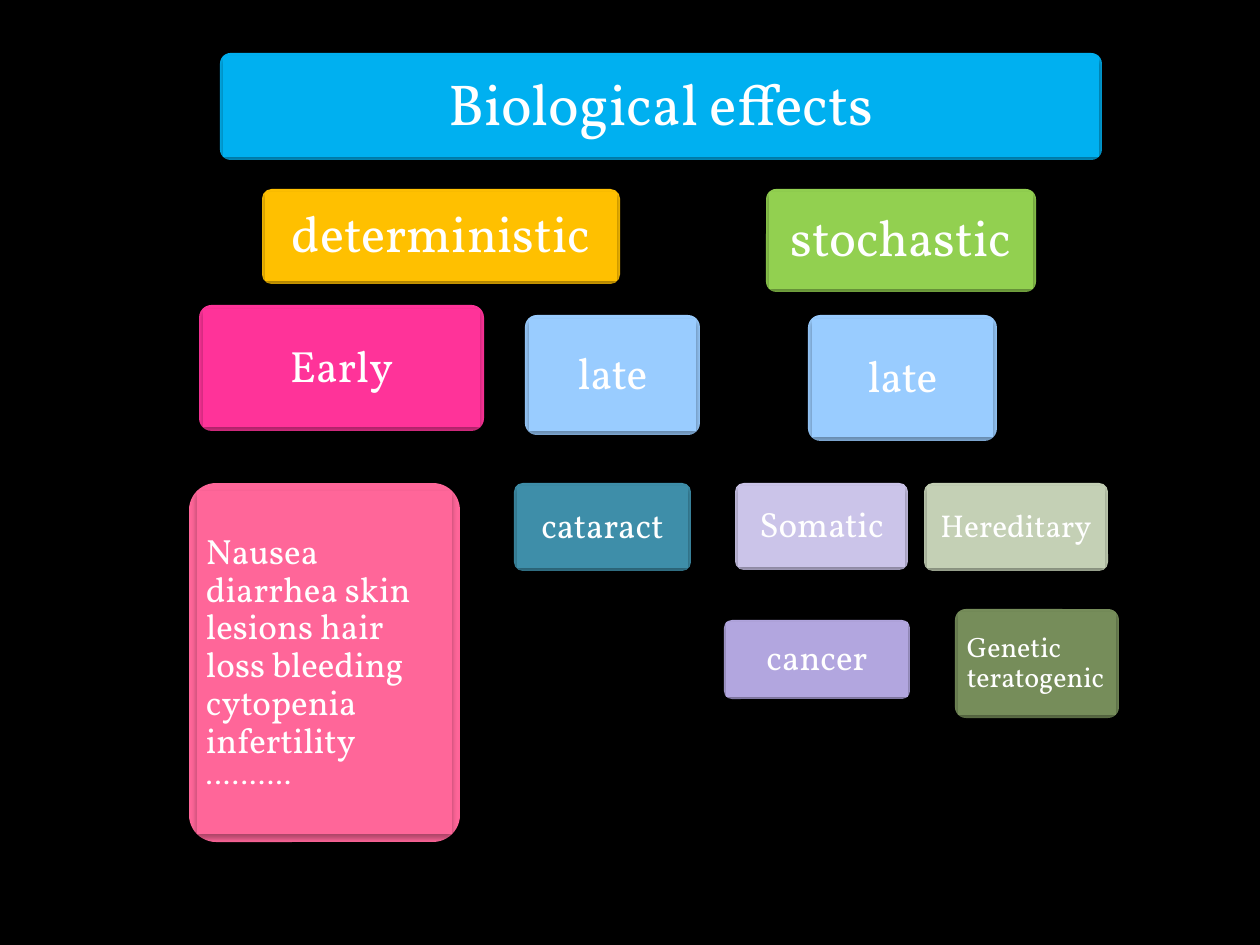
"""Build the slide that charts the biological effects of radiation."""
from lxml.etree import SubElement
from pptx import Presentation
from pptx.dml.color import RGBColor
from pptx.enum.shapes import MSO_SHAPE
from pptx.enum.text import MSO_ANCHOR, PP_ALIGN
from pptx.oxml import parse_xml
from pptx.oxml.ns import nsdecls, qn
from pptx.util import Emu, Pt

EMU_PER_PX = 914400 / 126
SHADOW = (
    f'<a:effectLst {nsdecls("a")}><a:outerShdw blurRad="44450" dist="27940" dir="5400000" '
    'algn="ctr" rotWithShape="0"><a:srgbClr val="000000"><a:alpha val="32000"/></a:srgbClr>'
    '</a:outerShdw></a:effectLst>'
)


def add_panel(group, kind, box, color):
    shape = group.shapes.add_shape(kind, *[Emu(round(length * EMU_PER_PX)) for length in box])
    shape.fill.solid()
    shape.fill.fore_color.rgb = RGBColor.from_string(color)
    shape.line.fill.background()
    shape._element.spPr.append(parse_xml(SHADOW))
    return shape


def write_text(shape, runs, *, inset, align):
    frame = shape.text_frame
    frame.word_wrap = True
    frame.vertical_anchor = MSO_ANCHOR.MIDDLE
    margin = Emu(round(inset * EMU_PER_PX))
    frame.margin_left = frame.margin_right = frame.margin_top = frame.margin_bottom = margin
    paragraph = frame.paragraphs[0]
    paragraph.alignment = align
    paragraph.line_spacing = 0.9
    space_after = SubElement(paragraph._p.get_or_add_pPr(), qn("a:spcAft"))
    SubElement(space_after, qn("a:spcPct"), val="35000")
    for text, size in runs:
        run = paragraph.add_run()
        run.text = text
        run.font.name = "Vollkorn"
        run.font.size = Pt(size)
        run.font.color.rgb = RGBColor.from_string("FFFFFF")


presentation = Presentation()
presentation.slide_width = Emu(round(1260 * EMU_PER_PX))
presentation.slide_height = Emu(round(945 * EMU_PER_PX))
slide = presentation.slides.add_slide(presentation.slide_layouts[6])
slide.background.fill.solid()
slide.background.fill.fore_color.rgb = RGBColor.from_string("000000")

LEFT, CENTER = PP_ALIGN.LEFT, PP_ALIGN.CENTER
symptoms = "Nausea diarrhea skin lesions hair loss bleeding cytopenia infertility "
cards = [
    ((220, 53, 882, 107), "00B0F0", [("Biological effects", 33)], 17, CENTER),
    ((262, 189, 358, 95), "FFC000", [("deterministic", 29)], 15, CENTER),
    ((766, 189, 270, 103), "92D050", [("stochastic", 29)], 15, CENTER),
    ((199, 305, 285, 126), "FF3399", [("Early", 25)], 13, CENTER),
    ((189, 483, 271, 359), "FF6699", [(symptoms, 20), ("……….", 16)], 9, LEFT),
    ((525, 315, 175, 120), "99CCFF", [("late", 25)], 13, CENTER),
    ((514, 483, 177, 88), "3E8EA9", [("cataract", 20)], 9, CENTER),
    ((808, 315, 189, 126), "99CCFF", [("late", 25)], 13, CENTER),
    ((735, 483, 173, 87), "CBC4E9", [("Somatic", 20)], 9, CENTER),
    ((924, 483, 184, 88), "C4D0B5", [("Hereditary", 18)], 9, CENTER),
    ((724, 620, 186, 79), "B2A6DF", [("cancer", 20)], 9, CENTER),
    ((955, 609, 164, 109), "768D5A", [("Genetic teratogenic", 16)], 9, LEFT),
]

for box, color, runs, inset, align in cards:
    group = slide.shapes.add_group_shape()
    rounded = add_panel(group, MSO_SHAPE.ROUNDED_RECTANGLE, box, color)
    rounded.adjustments[0] = 0.1
    left, top, width, height = box
    border = round(min(width, height) * 0.03)
    inner_box = (left + border, top + border, width - 2 * border, height - 2 * border)
    label = add_panel(group, MSO_SHAPE.RECTANGLE, inner_box, color)
    write_text(label, runs, inset=inset, align=align)

presentation.save("out.pptx")
